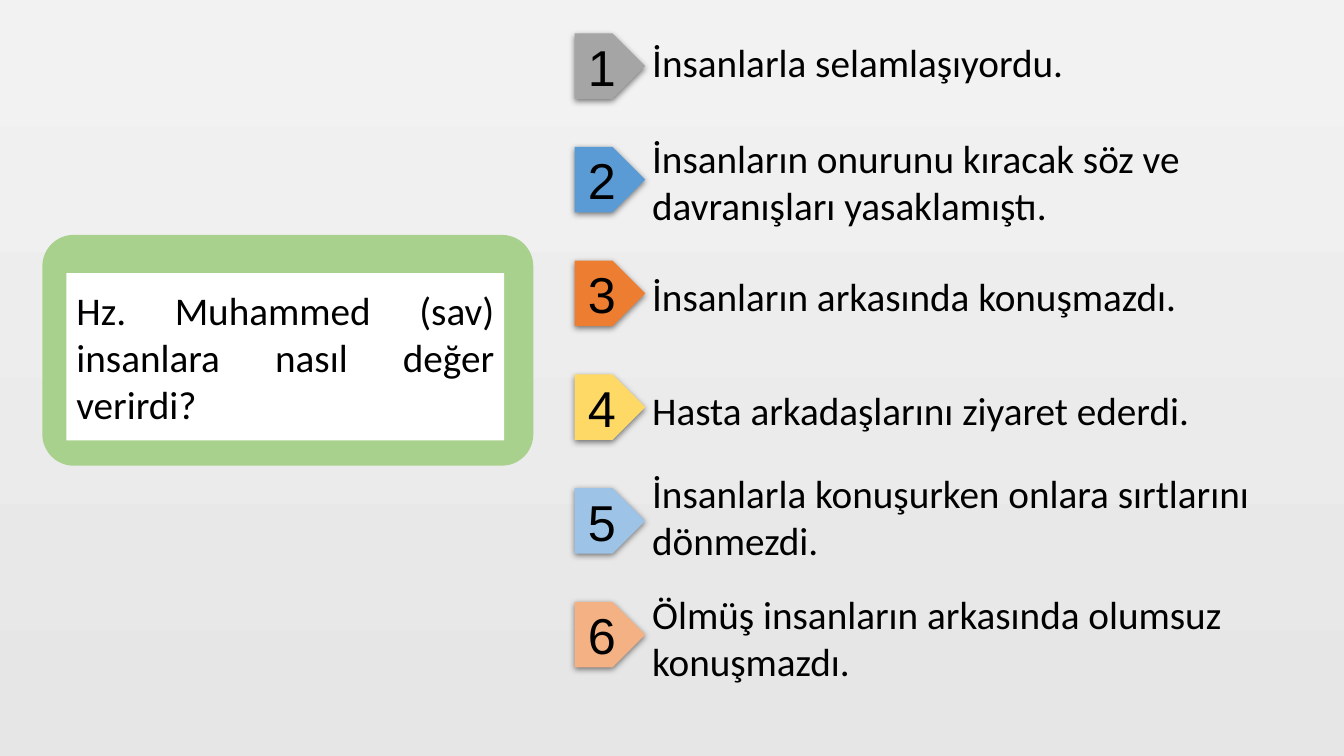
from lxml import etree
from pptx import Presentation, util as u
from pptx.dml.color import RGBColor
from pptx.enum import shapes, text
from pptx.oxml.ns import qn

QUESTION = "Hz. Muhammed (sav) insanlara nasıl değer verirdi?"
# answer, tag colour, text top, text width, wraps
ANSWERS = [
    ("İnsanlarla selamlaşıyordu.", "gray", 0.33, 4.32, False),
    ("İnsanların onurunu kıracak söz ve davranışları yasaklamıştı.", "blue", 1.28, 7.13, True),
    ("İnsanların arkasında konuşmazdı.", "orange", 2.65, 5.46, False),
    ("Hasta arkadaşlarını ziyaret ederdi.", "yellow", 3.78, 7.25, True),
    ("İnsanlarla konuşurken onlara sırtlarını dönmezdi.", "sky", 4.61, 7.6, True),
    ("Ölmüş insanların arkasında olumsuz konuşmazdı.", "peach", 5.81, 7.1, True),
]
COLORS = {
    "top": "F2F2F2", "bottom": "E7E6E6", "frame": "A9D18E", "white": "FFFFFF",
    "black": "000000", "gray": "A5A5A5", "blue": "5B9BD5", "orange": "ED7D31",
    "yellow": "FFD966", "sky": "9DC3E6", "peach": "F4B183",
}
WIDTH, HEIGHT = 13.33, 7.5
TAG_LEFT, TAG_TOP, TAG_WIDTH, TAG_HEIGHT = 5.7, 0.33, 0.7, 0.65
TAG_STEP, TAG_INSET = 1.128, 0.13
TEXT_LEFT, LINE_HEIGHT, TEXT_PADDING = 6.37, 0.47, 0.1


def rgb(name):
    return RGBColor.from_string(COLORS[name])


def add_box(slide, preset, box, color):
    sp = slide.shapes.add_shape(preset, *map(u.Inches, box))
    sp.fill.solid()
    sp.fill.fore_color.rgb = rgb(color)
    sp.line.fill.background()
    sp.shadow.inherit = False
    return sp


def write(sp, words, size, font, align=text.PP_ALIGN.LEFT):
    p = sp.text_frame.paragraphs[0]
    p.alignment = align
    r = p.add_run()
    r.text = words
    r.font.size = u.Pt(size)
    r.font.name = font
    r.font.color.rgb = rgb("black")


def add_shadow(sp):
    effects = sp._element.spPr.find(qn("a:effectLst"))
    shadow = etree.SubElement(effects, qn("a:outerShdw"), blurRad=str(u.Pt(4.5)),
                              dist=str(u.Pt(1.5)), dir="5400000", rotWithShape="0")
    color = etree.SubElement(shadow, qn("a:srgbClr"), val=COLORS["black"])
    etree.SubElement(color, qn("a:alpha"), val="50000")


def add_question(slide):
    frame = add_box(slide, shapes.MSO_SHAPE.ROUNDED_RECTANGLE, (0.42, 2.33, 4.87, 2.29), "frame")
    frame.adjustments[0] = 0.136
    panel = add_box(slide, shapes.MSO_SHAPE.RECTANGLE, (0.66, 2.71, 4.34, 1.66), "white")
    panel.text_frame.word_wrap = True
    panel.text_frame.vertical_anchor = text.MSO_ANCHOR.MIDDLE
    write(panel, QUESTION, 28, "Calibri", text.PP_ALIGN.JUSTIFY)


def add_tag(slide, index, color):
    top = TAG_TOP + index * TAG_STEP
    tag = add_box(slide, shapes.MSO_SHAPE.PENTAGON, (TAG_LEFT, top, TAG_WIDTH, TAG_HEIGHT), color)
    tag.adjustments[0] = 0.5
    add_shadow(tag)
    tf = tag.text_frame
    tf.word_wrap = True
    tf.vertical_anchor = text.MSO_ANCHOR.MIDDLE
    tf.margin_left = tf.margin_right = tf.margin_top = tf.margin_bottom = u.Inches(TAG_INSET)
    write(tag, str(index + 1), 36, "Arial")


def add_answer(slide, words, top, width, wraps):
    lines = 2 if len(words) > 40 else 1
    box = (TEXT_LEFT, top, width, lines * LINE_HEIGHT + TEXT_PADDING)
    sp = slide.shapes.add_textbox(*map(u.Inches, box))
    sp.text_frame.word_wrap = wraps
    sp.text_frame.auto_size = text.MSO_AUTO_SIZE.SHAPE_TO_FIT_TEXT
    write(sp, words, 28, "Calibri")


def main():
    prs = Presentation()
    prs.slide_width, prs.slide_height = u.Inches(WIDTH), u.Inches(HEIGHT)
    slide = prs.slides.add_slide(prs.slide_layouts[6])
    fill = slide.background.fill
    fill.gradient()
    fill.gradient_angle = 270
    for stop, position, color in zip(fill.gradient_stops, (0, 1), ("top", "bottom")):
        stop.position = position
        stop.color.rgb = rgb(color)
    add_question(slide)
    for index, (words, color, top, width, wraps) in enumerate(ANSWERS):
        add_tag(slide, index, color)
        add_answer(slide, words, top, width, wraps)
    prs.save("out.pptx")


if __name__ == "__main__":
    main()
